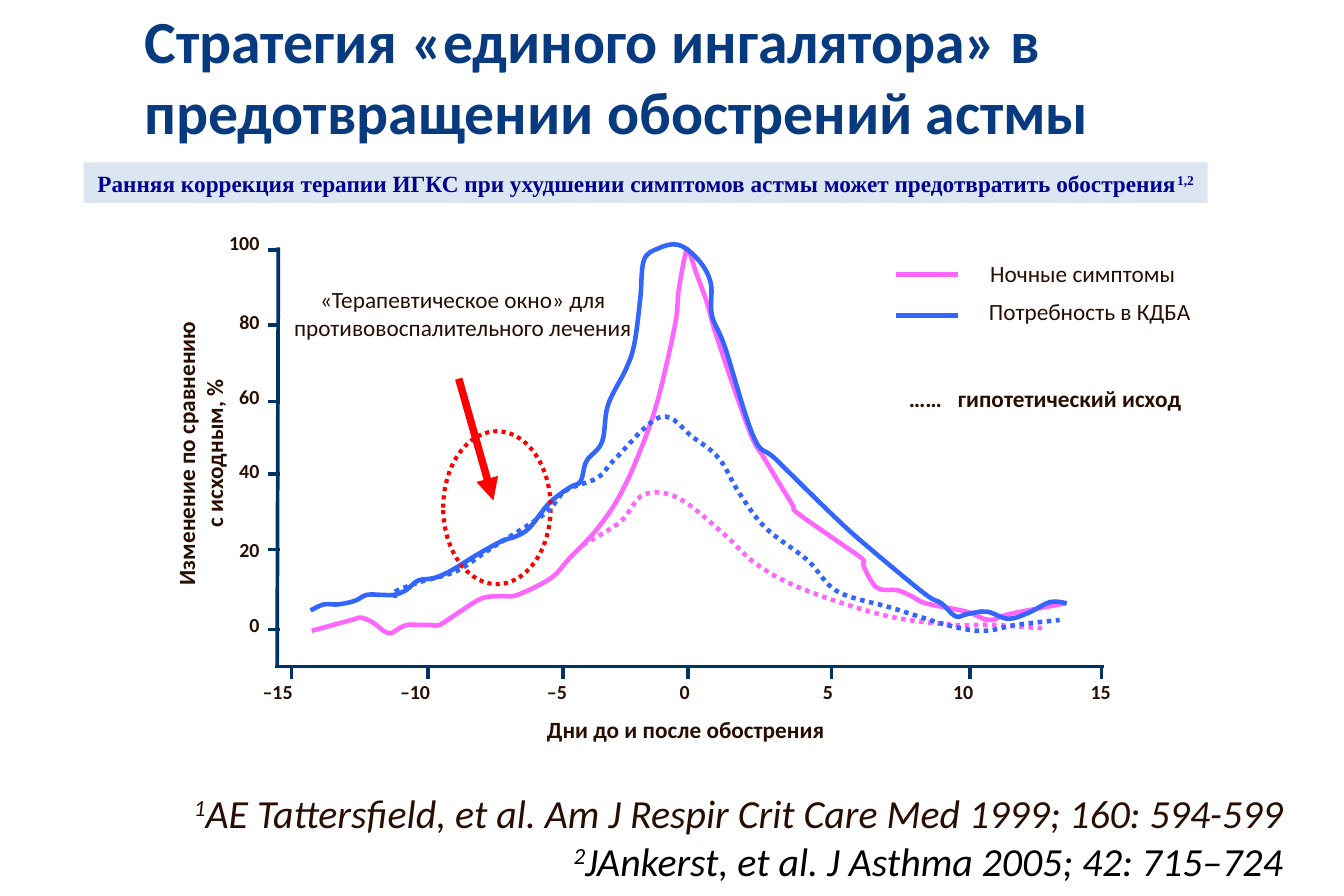
import lxml.etree
import pptx
import pptx.dml.color
import pptx.enum.dml
import pptx.enum.shapes
import pptx.enum.text
import pptx.oxml.ns
import pptx.util

COLORS = {"title": "083A7F", "text": "290D00", "black": "000000", "axis": "003366",
          "night": "FF66FF", "need": "3366FF", "window": "FF0000",
          "banner": "DCE6F2", "banner_text": "000090"}
# The grid has 100 columns and 100 rows to the inch
COLUMNS, ROWS = 1125, 750
UNIT = pptx.util.Inches(0.01)
ALIGN = pptx.enum.text.PP_ALIGN
DASH = pptx.enum.dml.MSO_LINE.ROUND_DOT
qn = pptx.oxml.ns.qn

# Label, tick column, label column and label width, from the left of the chart
DAYS = [("–15", 44, 10, 73), ("–10", 158, 125, 79), ("–5", 271, 248, 66),
        ("0", 376, 359, 43), ("5", 496, 479, 43), ("10", 612, 588, 59), ("15", 722, 703, 72)]
# Label, tick row, label row and label width, from the top of the chart
PERCENTS = [("100", 9, -12, 76), ("80", 72, 54, 52), ("60", 136, 117, 66),
            ("40", 197, 179, 56), ("20", 260, 245, 59), ("0", 327, 308, 43)]

NIGHT_SYMPTOMS = [
    (61, 328), (94, 319), (102, 317), (112, 321), (121, 328), (127, 330), (134, 326),
    (141, 323), (149, 323), (159, 323), (168, 323), (182, 314), (203, 301), (219, 299),
    (233, 298), (261, 284), (277, 267), (298, 245), (317, 218), (334, 182), (350, 137),
    (365, 72), (368, 44), (373, 16), (376, 9), (383, 29), (392, 54), (400, 82),
    (427, 160), (440, 184), (463, 222), (467, 229), (501, 253), (522, 268), (523, 274),
    (534, 292), (551, 294), (563, 299), (575, 305), (609, 312), (628, 319), (645, 314),
    (692, 305)]
RELIEVER_NEED = [
    (60, 311), (71, 306), (83, 306), (97, 303), (107, 298), (120, 298), (130, 298),
    (140, 294), (150, 286), (163, 284), (177, 278), (200, 264), (220, 253), (232, 249),
    (243, 242), (260, 221), (277, 208), (286, 203), (291, 186), (304, 170), (309, 139),
    (324, 109), (331, 88), (336, 50), (339, 18), (351, 8), (368, 5), (385, 18),
    (395, 37), (396, 64), (407, 91), (431, 166), (450, 185), (500, 234), (528, 259),
    (574, 297), (588, 305), (600, 316), (610, 314), (626, 312), (644, 318), (661, 313),
    (679, 304), (693, 305)]
NIGHT_HYPOTHETICAL = [
    (288, 256), (319, 237), (339, 214), (368, 217), (406, 247), (433, 272), (472, 293),
    (540, 315), (598, 323), (629, 323), (675, 326)]
NEED_HYPOTHETICAL = [
    (129, 297), (131, 299), (131, 295), (152, 287), (182, 278), (211, 259), (256, 230),
    (273, 211), (300, 200), (315, 184), (353, 149), (380, 166), (402, 184), (419, 213),
    (441, 242), (476, 269), (501, 295), (547, 309), (596, 324), (624, 328), (651, 323),
    (687, 319)]


def rgb(name):
    return pptx.dml.color.RGBColor.from_string(COLORS[name])


def grid(*lengths):
    return [pptx.util.Emu(round(length * UNIT)) for length in lengths]


def style(run, size, color="text", font="Calibri", bold=False, italic=False, raised=False):
    run.font.size, run.font.name = pptx.util.Pt(size), font
    run.font.bold, run.font.italic = bold, italic
    run.font.color.rgb = rgb(color)
    if raised:
        run.font._element.set("baseline", "30000")


def add_text(slide, text, box, size=14, align=ALIGN.LEFT, bold=False, wrap=True):
    label = slide.shapes.add_textbox(*grid(*box))
    label.text_frame.word_wrap = wrap
    paragraph = label.text_frame.paragraphs[0]
    paragraph.text, paragraph.alignment = text, align
    style(paragraph.runs[0], size, bold=bold)
    return label


def outline(shape, color, width, dash=None):
    shape.line.color.rgb, shape.line.width = rgb(color), pptx.util.Pt(width)
    if dash:
        shape.line.dash_style = dash


def add_line(slide, start, end, color, width):
    line = slide.shapes.add_connector(
        pptx.enum.shapes.MSO_CONNECTOR.STRAIGHT, *grid(*start, *end))
    outline(line, color, width)
    lxml.etree.SubElement(line._element.spPr, qn("a:effectLst"))
    return line


def smooth(curve, points):
    """Turn the straight segments between the points into Bézier curves."""
    local = [(x - curve.left, y - curve.top) for x, y in points]
    knots = [local[0], *local, local[-1]]
    segments = list(curve._element.iter(qn("a:lnTo")))
    for segment, a, b, c, d in zip(segments, knots, knots[1:], knots[2:], knots[3:]):
        bezier = lxml.etree.Element(qn("a:cubicBezTo"))
        leave = [b[i] + (c[i] - a[i]) / 6 for i in (0, 1)]
        arrive = [c[i] - (d[i] - b[i]) / 6 for i in (0, 1)]
        for x, y in (leave, arrive, c):
            lxml.etree.SubElement(bezier, qn("a:pt"), x=str(round(x)), y=str(round(y)))
        segment.getparent().replace(segment, bezier)


def add_curve(slide, box, points, color, dash=None):
    left, top = box[:2]
    anchors = [grid(left + x, top + y) for x, y in points]
    builder = slide.shapes.build_freeform(*anchors[0])
    builder.add_line_segments(anchors[1:], close=False)
    curve = builder.convert_to_shape()
    smooth(curve, anchors)
    curve.shadow.inherit = False
    curve.fill.background()
    outline(curve, color, 2.75, dash)


def add_title(slide, box):
    title = slide.shapes.title
    title.left, title.top, title.width, title.height = grid(*box)
    frame = title.text_frame
    frame.text = "Стратегия «единого ингалятора» в предотвращении обострений астмы"
    frame.word_wrap, frame.auto_size = True, pptx.enum.text.MSO_AUTO_SIZE.NONE
    frame.vertical_anchor = pptx.enum.text.MSO_ANCHOR.TOP
    frame.paragraphs[0].alignment = ALIGN.LEFT
    style(frame.paragraphs[0].runs[0], 36, "title", bold=True)


def add_banner(slide, box):
    banner = slide.shapes.add_shape(pptx.enum.shapes.MSO_SHAPE.RECTANGLE, *grid(*box))
    banner.shadow.inherit = False
    banner.fill.solid()
    banner.fill.fore_color.rgb = rgb("banner")
    banner.line.fill.background()
    frame = banner.text_frame
    frame.margin_left = frame.margin_right = 0
    paragraph = frame.paragraphs[0]
    paragraph.text = ("Ранняя коррекция терапии ИГКС при ухудшении симптомов астмы "
                      "может предотвратить обострения")
    paragraph.alignment = ALIGN.CENTER
    paragraph.add_run().text = "1,2"
    for run, raised in zip(paragraph.runs, (False, True)):
        style(run, 14, "banner_text", "Times New Roman", bold=True, raised=raised)


def add_axes(slide, box):
    left, top, width, height = box
    base = top + height
    add_line(slide, (left + 30, base), (left + width, base), "axis", 2.25)
    add_line(slide, (left + 32, base + 1), (left + 33, top + 7), "axis", 2.25)
    for label, tick, row, span in PERCENTS:
        add_line(slide, (left + 24, top + tick), (left + 34, top + tick), "axis", 2.25)
        add_text(slide, label, (left + 27 - span, top + row, span, 30), 12,
                 ALIGN.RIGHT, True)
    for label, tick, column, span in DAYS:
        add_line(slide, (left + tick, base + 1), (left + tick, base + 10), "axis", 2.25)
        add_text(slide, label, (left + column, base + 6, span, 30), 12, bold=True)
    # Axis titles
    change = add_text(slide, "Изменение по сравнению с исходным, %",
                      (left - 157, top + 151, 249, 57), align=ALIGN.CENTER, bold=True)
    change.rotation = 270
    add_text(slide, "Дни до и после обострения", (left + 74, base + 36, 600, 33),
             align=ALIGN.CENTER, bold=True)


def add_window(slide, box):
    left, top = box[:2]
    window = slide.shapes.add_shape(pptx.enum.shapes.MSO_SHAPE.OVAL,
                                    *grid(left + 171, top + 161, 90, 128))
    window.shadow.inherit = False
    window.fill.background()
    outline(window, "window", 2.5, DASH)
    add_text(slide, "«Терапевтическое окно» для противовоспалительного лечения",
             (left + 36, top + 34, 303, 57), align=ALIGN.CENTER)
    arrow = add_line(slide, (left + 184, top + 117), (left + 213, top + 219), "window", 4.5)
    lxml.etree.SubElement(arrow.line._get_or_add_ln(), qn("a:tailEnd"), type="triangle")


def add_legend(slide, box):
    left, top, width, height = box
    entries = [("Ночные симптомы", "night", 263), ("Потребность в КДБА", "need", 192)]
    for index, (label, color, span) in enumerate(entries):
        row = top + 18 + 34 * index
        add_line(slide, (left, row), (left + 52, row), color, 2.75)
        add_text(slide, label, (left + 69 - index, row - 18 - 2 * index, span, 34),
                 wrap=index == 0)
    outcome = add_text(slide, "……\tгипотетический исход",
                       (left + 1, top + height - 33, width, 34), bold=True)
    properties = outcome.text_frame.paragraphs[0]._p.get_or_add_pPr()
    tabs = lxml.etree.SubElement(properties, qn("a:tabLst"))
    lxml.etree.SubElement(tabs, qn("a:tab"), pos=str(41 * UNIT), algn="l")


def add_chart_region(slide, box):
    add_axes(slide, box)
    add_curve(slide, box, NIGHT_SYMPTOMS, "night")
    add_curve(slide, box, RELIEVER_NEED, "need")
    add_window(slide, box)
    add_curve(slide, box, NIGHT_HYPOTHETICAL, "night", DASH)
    add_curve(slide, box, NEED_HYPOTHETICAL, "need", DASH)
    add_legend(slide, (box[0] + 550, box[1] + 12, 315, 138))


def add_references(slide, box):
    references = slide.shapes.add_textbox(*grid(*box)).text_frame
    references.word_wrap = True
    citations = [
        ("1", "AE Tattersfield, et al. Am J Respir Crit Care Med 1999; 160: 594-599", "text"),
        ("2", "JAnkerst, et al. J Asthma 2005; 42: 715–724", "black")]
    references.text = "\n".join(number for number, _, _ in citations)
    for paragraph, (_, citation, color) in zip(references.paragraphs, citations):
        paragraph.alignment = ALIGN.RIGHT
        paragraph.add_run().text = citation
        for run, raised in zip(paragraph.runs, (True, False)):
            style(run, 24, color, italic=True, raised=raised)


def main():
    deck = pptx.Presentation()
    deck.slide_width, deck.slide_height = grid(COLUMNS, ROWS)
    slide = deck.slides.add_slide(deck.slide_layouts.get_by_name("Title Only"))
    add_title(slide, (111, -2, 975, 131))
    add_banner(slide, (70, 136, 941, 34))
    add_chart_region(slide, (200, 200, 724, 358))
    add_references(slide, (70, 655, 1014, 91))
    deck.save("out.pptx")


if __name__ == "__main__":
    main()
